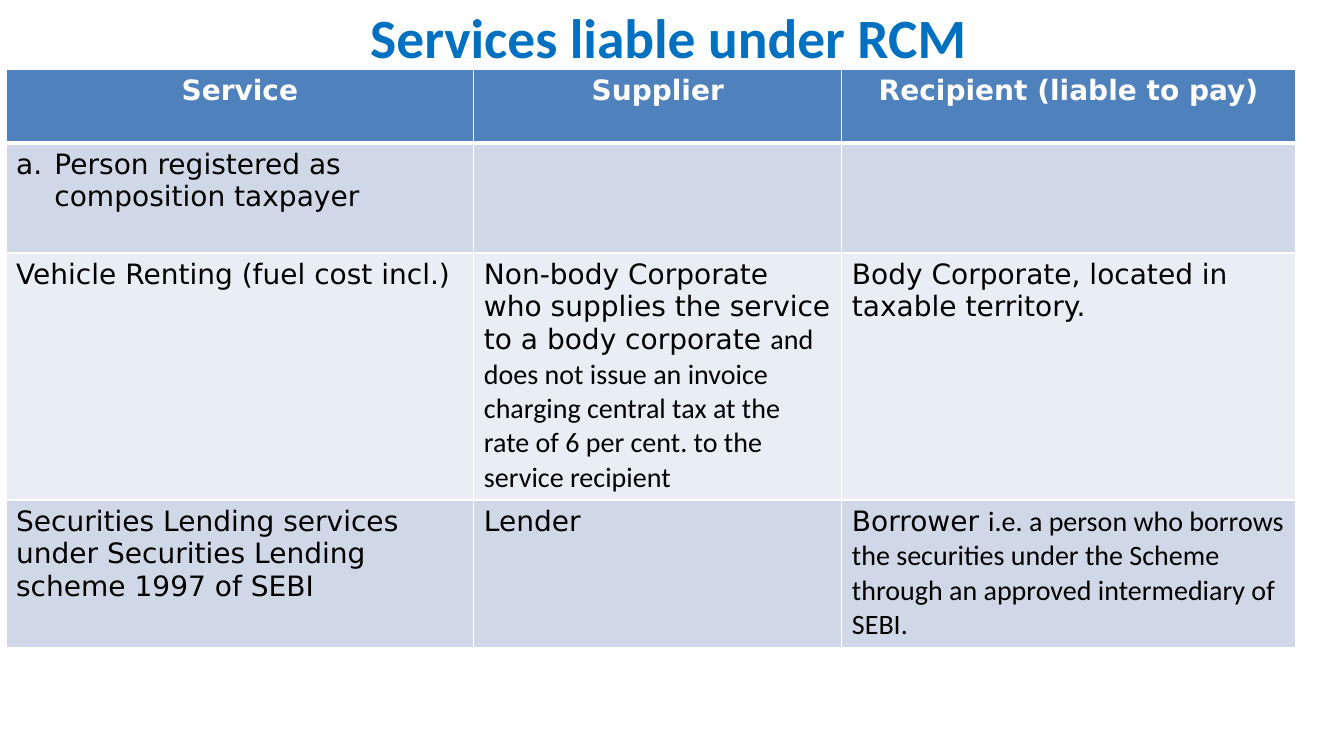
from lxml import etree
from pptx import Presentation
from pptx.dml.color import RGBColor
from pptx.enum.text import MSO_ANCHOR, PP_ALIGN
from pptx.oxml.ns import qn
from pptx.util import Inches, Pt

CENTER = PP_ALIGN.CENTER
LEFT = PP_ALIGN.LEFT
MIDDLE = MSO_ANCHOR.MIDDLE

TITLE_BLUE = RGBColor(0x00, 0x70, 0xC0)
HEADER_BLUE = RGBColor(0x4F, 0x81, 0xBD)
BAND_DARK = RGBColor(0xD0, 0xD8, 0xE8)
BAND_LIGHT = RGBColor(0xE9, 0xED, 0xF4)
WHITE = RGBColor(0xFF, 0xFF, 0xFF)
BLACK = RGBColor(0x00, 0x00, 0x00)

TITLE_FONT = "Calibri"
TABLE_FONT = "DejaVu Sans"
DETAIL_FONT = "Calibri"

COLUMN_WIDTHS = [4.64, 3.65, 4.5]
ROW_HEIGHTS = [0.73, 1.09, 2.45, 1.46]

# Each cell holds a main text and, where needed, a detail in the second font
ROWS = [
    [("Service",), ("Supplier",), ("Recipient (liable to pay)",)],
    [("Person registered as composition taxpayer",), (), ()],
    [
        ("Vehicle Renting (fuel cost incl.)",),
        ("Non-body Corporate who supplies the service to a body corporate ",
         "and does not issue an invoice charging central tax at the rate "
         "of 6 per cent. to the service recipient"),
        ("Body Corporate, located in taxable territory.",),
    ],
    [
        ("Securities Lending services under Securities Lending scheme 1997 of SEBI",),
        ("Lender",),
        ("Borrower ",
         "i.e. a person who borrows the securities under the Scheme "
         "through an approved intermediary of SEBI."),
    ],
]


class SlideBuilder:
    def __init__(self, presentation):
        self.slide = presentation.slides.add_slide(presentation.slide_layouts[5])
        self.table_size = 20

    def add_run(self, paragraph, text, font, size, color, bold):
        run = paragraph.add_run()
        run.text = text
        run.font.name = font
        run.font.size = Pt(size)
        run.font.color.rgb = color
        run.font.bold = bold

    def title(self, text, left, top, width, height):
        shape = self.slide.shapes.title
        shape.left, shape.top = Inches(left), Inches(top)
        shape.width, shape.height = Inches(width), Inches(height)
        shape.text_frame.vertical_anchor = MIDDLE
        paragraph = shape.text_frame.paragraphs[0]
        paragraph.alignment = CENTER
        self.add_run(paragraph, text, TITLE_FONT, 39.6, TITLE_BLUE, True)

    def table(self, rows, left, top):
        frame = self.slide.shapes.add_table(
            len(rows), len(COLUMN_WIDTHS), Inches(left), Inches(top),
            Inches(sum(COLUMN_WIDTHS)), Inches(sum(ROW_HEIGHTS)))
        table = frame.table
        for column, width in zip(table.columns, COLUMN_WIDTHS):
            column.width = Inches(width)
        for row, height in zip(table.rows, ROW_HEIGHTS):
            row.height = Inches(height)
        for row_index, row in enumerate(rows):
            for column_index, texts in enumerate(row):
                self.fill_cell(table.cell(row_index, column_index), texts, row_index)
        return table

    def fill_cell(self, cell, texts, row_index):
        is_header = row_index == 0
        self.borders(cell, top=3 if row_index == 1 else 1, bottom=3 if is_header else 1)
        cell.fill.solid()
        band = BAND_DARK if row_index % 2 else BAND_LIGHT
        cell.fill.fore_color.rgb = HEADER_BLUE if is_header else band
        paragraph = cell.text_frame.paragraphs[0]
        paragraph.alignment = CENTER if is_header else LEFT
        color = WHITE if is_header else BLACK
        for text, font in zip(texts, (TABLE_FONT, DETAIL_FONT)):
            self.add_run(paragraph, text, font, self.table_size, color, is_header)

    def borders(self, cell, top, bottom):
        properties = cell._tc.get_or_add_tcPr()
        for side, width in (("L", 1), ("R", 1), ("T", top), ("B", bottom)):
            line = etree.SubElement(properties, qn(f"a:ln{side}"), w=str(Pt(width)))
            fill = etree.SubElement(line, qn("a:solidFill"))
            etree.SubElement(fill, qn("a:srgbClr"), val=str(WHITE))

    def letter_item(self, cell, indent):
        properties = cell.text_frame.paragraphs[0]._p.get_or_add_pPr()
        properties.set("marL", str(Inches(indent)))
        properties.set("indent", str(-Inches(indent)))
        etree.SubElement(properties, qn("a:buFont"), typeface=TABLE_FONT)
        etree.SubElement(properties, qn("a:buAutoNum"), type="alphaLcPeriod")


def main():
    presentation = Presentation()
    presentation.slide_width = Inches(13.33)
    presentation.slide_height = Inches(7.5)
    builder = SlideBuilder(presentation)

    # Title
    builder.title("Services liable under RCM", 0.63, 0.03, 12, 0.66)

    # Services table
    table = builder.table(ROWS, 0.06, 0.69)
    builder.letter_item(table.cell(1, 0), 0.38)

    presentation.save("out.pptx")


if __name__ == "__main__":
    main()
